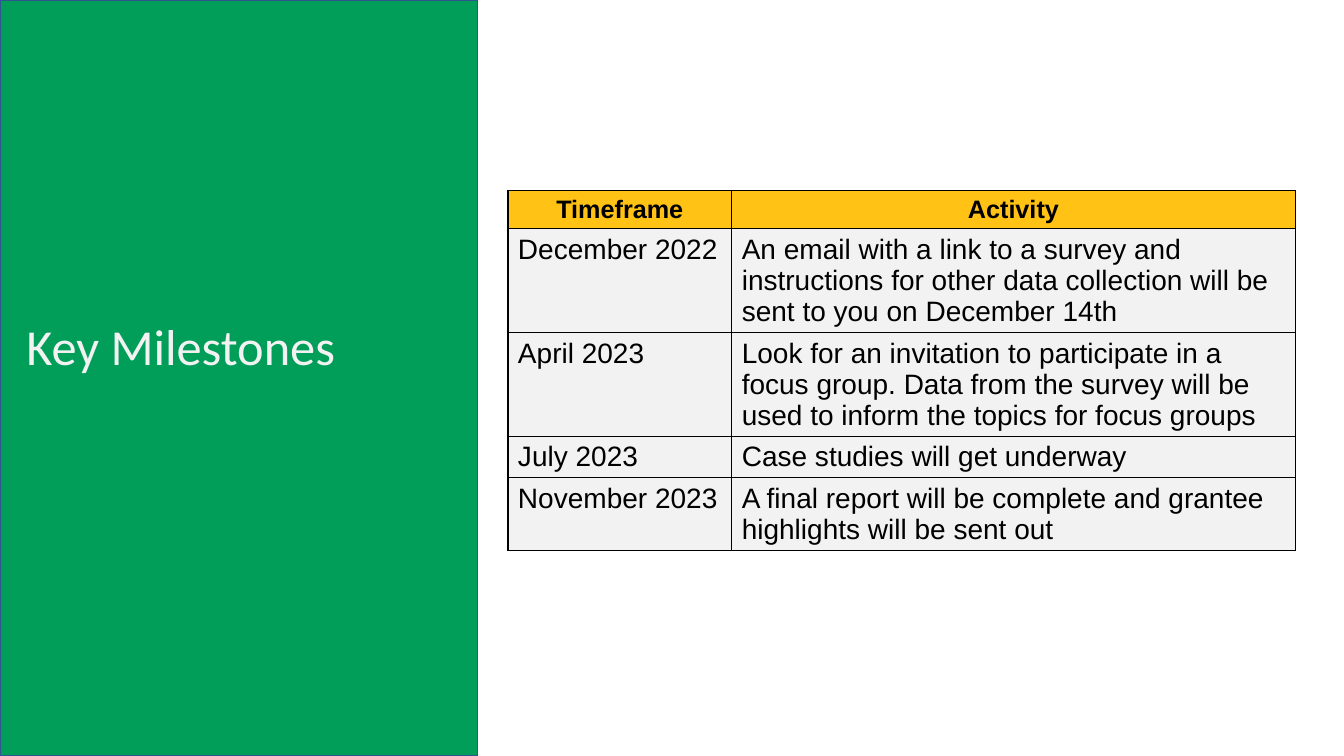
import pptx
import pptx.util
import pptx.oxml
import pptx.oxml.ns
import pptx.dml.color
import pptx.enum.shapes
import pptx.enum.text
from pptx.util import Cm

RGBColor = pptx.dml.color.RGBColor
GREEN = RGBColor(0x00, 0x9E, 0x59)
BLUE = RGBColor(0x32, 0x54, 0x91)
GOLD = RGBColor(0xFF, 0xC2, 0x15)
PALE = RGBColor(0xF2, 0xF2, 0xF2)
BLACK = RGBColor(0x00, 0x00, 0x00)

ROWS = [
    ("Timeframe", "Activity"),
    ("December 2022", "An email with a link to a survey and instructions for "
     "other data collection will be sent to you on December 14th"),
    ("April 2023", "Look for an invitation to participate in a focus group. "
     "Data from the survey will be used to inform the topics for focus groups"),
    ("July 2023", "Case studies will get underway"),
    ("November 2023", "A final report will be complete and grantee highlights "
     "will be sent out"),
]
WIDTHS = (Cm(5.64), Cm(14.2))
ROW_HEIGHT = Cm(0.86)


def set_font(para, name, size, color, bold=False):
    para.font.name = name
    para.font.size = pptx.util.Pt(size)
    para.font.color.rgb = color
    para.font.bold = bold


def add_panel(slide, height):
    panel = slide.shapes.add_shape(
        pptx.enum.shapes.MSO_SHAPE.RECTANGLE, 0, 0, Cm(12.04), height)
    panel.shadow.inherit = False
    panel.fill.solid()
    panel.fill.fore_color.rgb = GREEN
    panel.line.color.rgb = BLUE
    panel.line.width = pptx.util.Pt(1)
    slide.shapes._spTree.insert(2, panel._element)


def set_title(slide, text):
    title = slide.shapes.title
    title.left, title.top = Cm(0.41), Cm(1.12)
    title.width, title.height = Cm(11.18), Cm(15.37)
    frame = title.text_frame
    frame.text = text
    frame.word_wrap = True
    frame.auto_size = pptx.enum.text.MSO_AUTO_SIZE.NONE
    frame.vertical_anchor = pptx.enum.text.MSO_ANCHOR.MIDDLE
    para = frame.paragraphs[0]
    para.alignment = pptx.enum.text.PP_ALIGN.LEFT
    para.line_spacing = 0.9
    set_font(para, "Calibri", 36, PALE)


def add_border(cell):
    props = cell._tc.get_or_add_tcPr()
    for place, side in enumerate(("lnL", "lnR", "lnT", "lnB")):
        props.insert(place, pptx.oxml.parse_xml(
            f'<a:{side} {pptx.oxml.ns.nsdecls("a")} w="12700"><a:solidFill>'
            f'<a:srgbClr val="{BLACK}"/></a:solidFill></a:{side}>'))


def fill_cell(cell, text, header):
    cell.text = text
    cell.fill.solid()
    cell.fill.fore_color.rgb = GOLD if header else PALE
    add_border(cell)
    para = cell.text_frame.paragraphs[0]
    align = pptx.enum.text.PP_ALIGN
    para.alignment = align.CENTER if header else align.LEFT
    set_font(para, "Arial", 18 if header else 20, BLACK, header)


def add_grid(slide):
    table = slide.shapes.add_table(
        len(ROWS), len(WIDTHS), Cm(12.8), Cm(4.8),
        sum(WIDTHS), ROW_HEIGHT * len(ROWS)).table
    table.horz_banding = False
    for column, width in zip(table.columns, WIDTHS):
        column.width = width
    for r, texts in enumerate(ROWS):
        table.rows[r].height = ROW_HEIGHT
        for c, text in enumerate(texts):
            fill_cell(table.cell(r, c), text, r == 0)


def main():
    deck = pptx.Presentation()
    deck.slide_width, deck.slide_height = Cm(33.87), Cm(19.05)
    slide = deck.slides.add_slide(deck.slide_layouts[5])
    add_panel(slide, deck.slide_height)
    set_title(slide, "Key Milestones")
    add_grid(slide)
    deck.save("out.pptx")


if __name__ == "__main__":
    main()
